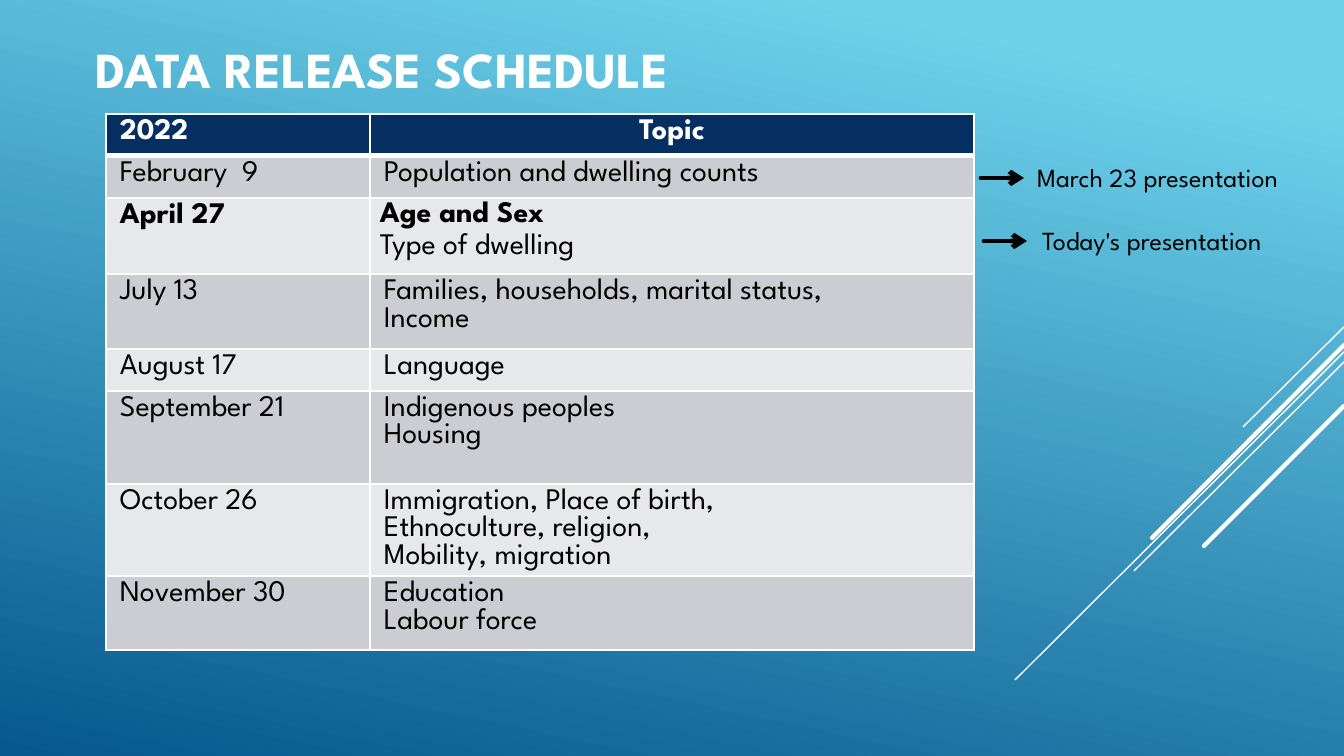
from pptx import Presentation
from pptx.dml.color import RGBColor
from pptx.enum.shapes import MSO_CONNECTOR
from pptx.enum.text import MSO_ANCHOR, PP_ALIGN
from pptx.oxml.ns import qn
from pptx.util import Pt
from lxml import etree

STRAIGHT = MSO_CONNECTOR.STRAIGHT
MIDDLE = MSO_ANCHOR.MIDDLE
LEFT, CENTER = PP_ALIGN.LEFT, PP_ALIGN.CENTER

EMU_PER_PX = 9144000 / 1344
FONT = "League Spartan"
WHITE = RGBColor(0xFF, 0xFF, 0xFF)
BLACK = RGBColor(0x00, 0x00, 0x00)
NAVY = RGBColor(0x05, 0x2F, 0x61)
DARK_BAND = RGBColor(0xCC, 0xCD, 0xD2)
LIGHT_BAND = RGBColor(0xE7, 0xE8, 0xEA)
SKY = RGBColor(0x6E, 0xD2, 0xEB)
DEEP_BLUE = RGBColor(0x06, 0x58, 0x8E)

# start x, start y, end x, end y, width in points
DIAGONALS = [
    (1344, 327, 1243, 427, 0.75),
    (1344, 352, 1015, 680, 0.75),
    (1344, 362, 1134, 571, 0.75),
    (1344, 345, 1152, 538, 2.25),
    (1344, 406, 1204, 546, 2.25),
]

# row height, date, topics
SCHEDULE = [
    (42, "2022", ["Topic"]),
    (42, "February  9", ["Population and dwelling counts"]),
    (76, "April 27", ["Age and Sex", "Type of dwelling"]),
    (75, "July 13", ["Families, households, marital status,", "Income"]),
    (42, "August 17", ["Language"]),
    (93, "September 21", ["Indigenous peoples", "Housing"]),
    (92, "October 26", ["Immigration, Place of birth,", "Ethnoculture, religion,",
                        "Mobility, migration"]),
    (74, "November 30", ["Education", "Labour force"]),
]
HEADER_ROW, TODAY_ROW = 0, 2
COLUMN_WIDTHS = (264, 604)

# arrow start x, arrow y, note left, note width, text
NOTES = [
    (981, 178, 1024, 320, "March 23 presentation"),
    (984, 241, 1029, 296, "Today's presentation"),
]


def px(length):
    return round(length * EMU_PER_PX)


def set_font(para, size, color, bold=False):
    font = para.font
    font.name, font.size, font.bold = FONT, Pt(size), bold
    font.color.rgb = color


def paint_background(page):
    fill = page.background.fill
    fill.gradient()
    fill.gradient_angle = 360 - 102
    for stop, color, position in zip(fill.gradient_stops, (SKY, DEEP_BLUE), (0.1, 1)):
        stop.color.rgb, stop.position = color, position


def add_line(page, start, end, color, width, arrow=False):
    line = page.shapes.add_connector(STRAIGHT, *map(px, start + end))
    line.line.color.rgb = color
    line.line.width = Pt(width)
    properties = line._element.spPr
    outline = properties.find(qn("a:ln"))
    if width > 1:
        outline.set("cap", "rnd")
    if arrow:
        etree.SubElement(outline, qn("a:tailEnd"), type="arrow")
    etree.SubElement(properties, qn("a:effectLst"))


def add_title(page, text):
    title = page.shapes.title
    title.left, title.top, title.width, title.height = map(px, (47, 22, 1277, 92))
    frame = title.text_frame
    frame.text = text
    frame.margin_left = px(49)
    frame.vertical_anchor = MIDDLE
    para = frame.paragraphs[0]
    para.alignment = LEFT
    set_font(para, 27, WHITE, bold=True)


def set_borders(cell, bottom_width):
    properties = cell._tc.get_or_add_tcPr()
    for side, width in (("L", 1), ("R", 1), ("T", 1), ("B", bottom_width)):
        border = etree.SubElement(properties, qn(f"a:ln{side}"), w=str(Pt(width)))
        fill = etree.SubElement(border, qn("a:solidFill"))
        etree.SubElement(fill, qn("a:srgbClr"), val=str(WHITE))


def fill_cell(cell, lines, row, column):
    """Write and format one schedule cell according to its row and column."""
    is_header = row == HEADER_ROW
    is_today = row == TODAY_ROW
    tight = is_today and column == 1
    set_borders(cell, 3 if is_header else 1)
    cell.fill.solid()
    cell.fill.fore_color.rgb = NAVY if is_header else (LIGHT_BAND, DARK_BAND)[row % 2]
    cell.margin_left = cell.margin_right = px(10 if tight else 14)
    cell.margin_top = cell.margin_bottom = px(0 if tight else 5)
    cell.text_frame.text = "\n".join(lines)
    for index, para in enumerate(cell.text_frame.paragraphs):
        para.alignment = CENTER if is_header and column == 1 else LEFT
        if tight:
            para.line_spacing = 1.15
        set_font(para, 16, WHITE if is_header else BLACK,
                 bold=is_header or (is_today and index == 0))


def add_schedule(page):
    height = sum(row_height for row_height, _, _ in SCHEDULE)
    table = page.shapes.add_table(
        len(SCHEDULE), len(COLUMN_WIDTHS), px(106), px(114),
        px(sum(COLUMN_WIDTHS)), px(height)).table
    table.horz_banding = False
    for column, width in zip(table.columns, COLUMN_WIDTHS):
        column.width = px(width)
    for row, (row_height, date, topics) in enumerate(SCHEDULE):
        table.rows[row].height = px(row_height)
        for column, lines in enumerate(([date], topics)):
            fill_cell(table.cell(row, column), lines, row, column)


def add_note(page, arrow_left, middle, left, width, text):
    """Add a side note with the arrow that leads to it."""
    box = page.shapes.add_textbox(px(left), px(middle - 23), px(width), px(46))
    frame = box.text_frame
    frame.word_wrap = True
    frame.text = text
    set_font(frame.paragraphs[0], 14, BLACK)
    add_line(page, (arrow_left, middle), (arrow_left + 43, middle), BLACK, 2.5, arrow=True)


def main():
    deck = Presentation()
    deck.slide_width, deck.slide_height = px(1344), px(756)
    page = deck.slides.add_slide(deck.slide_layouts[5])
    paint_background(page)
    for x1, y1, x2, y2, width in DIAGONALS:
        add_line(page, (x1, y1), (x2, y2), WHITE, width)
    add_title(page, "DATA RELEASE SCHEDULE")
    add_schedule(page)
    for note in NOTES:
        add_note(page, *note)
    deck.save("out.pptx")


if __name__ == "__main__":
    main()
